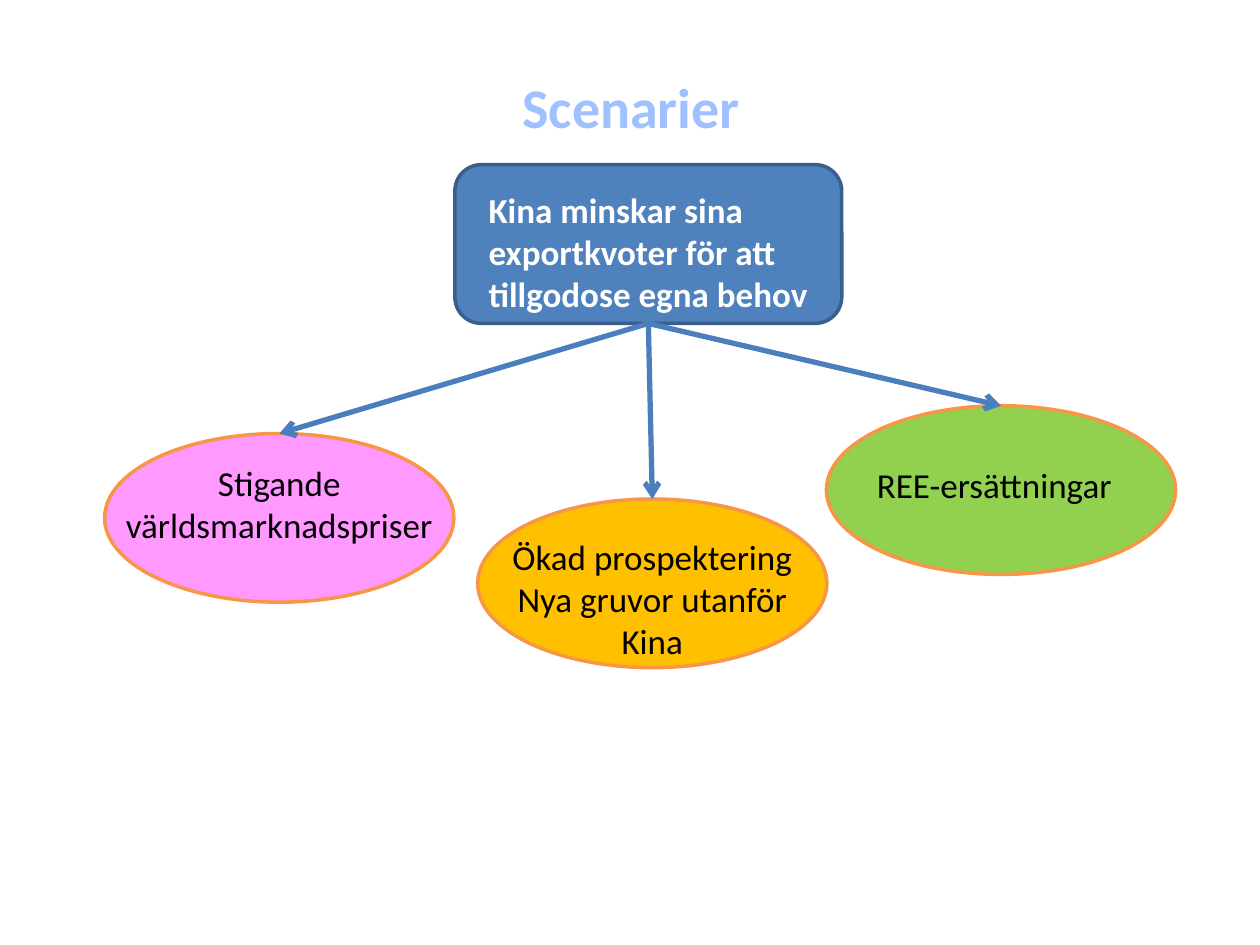
from pptx import Presentation
from pptx import util as u
from pptx.dml.color import RGBColor
from pptx.enum import shapes, text
from pptx.oxml.ns import qn
from lxml import etree

FONT = "Calibri"
TITLE_BLUE = RGBColor(0xA0, 0xC1, 0xFF)
BOX_BLUE = RGBColor(0x4F, 0x81, 0xBD)
BOX_EDGE = RGBColor(0x3A, 0x5F, 0x8C)
ARROW_BLUE = RGBColor(0x4B, 0x7E, 0xBC)
ORANGE = RGBColor(0xF7, 0x96, 0x46)
PINK = RGBColor(0xFF, 0x99, 0xFF)
AMBER = RGBColor(0xFF, 0xC0, 0x00)
GREEN = RGBColor(0x92, 0xD0, 0x50)
WHITE = RGBColor(0xFF, 0xFF, 0xFF)
BLACK = RGBColor(0, 0, 0)

TITLE = "Scenarier"
TITLE_AREA = (5.03, 1.32, 15.39, 1.63)
CAUSE = "Kina minskar sina exportkvoter för att tillgodose egna behov"
CAUSE_AREA = (9.17, 3.32, 7.8, 3.2)
CAUSE_TEXT_AREA = (9.6, 3.68, 7.77, 2.82)
ELLIPSE_SIZE = (7.04, 3.4)
OUTCOMES = [
    {"text": "Stigande världsmarknadspriser", "fill": PINK,
     "corner": (2.11, 8.74), "text_area": (2.11, 9.17, 7.04, 1.96)},
    {"text": "Ökad prospektering\nNya gruvor utanför Kina", "fill": AMBER,
     "corner": (9.63, 10.06), "text_area": (9.63, 10.67, 7.04, 2.82)},
    {"text": "REE-ersättningar", "fill": GREEN,
     "corner": (16.66, 8.18), "text_area": (16.68, 9.22, 6.73, 1.12)},
]


def cm(values):
    return [u.Cm(value) for value in values]


def write(shape, content, size, color, alignment, bold=False):
    frame = shape.text_frame
    frame.word_wrap = True
    frame.text = content
    for paragraph in frame.paragraphs:
        paragraph.alignment = alignment
        for run in paragraph.runs:
            run.font.name = FONT
            run.font.size = u.Pt(size)
            run.font.bold = bold
            run.font.color.rgb = color


def add_outline_shape(slide, kind, area, fill, edge):
    shape = slide.shapes.add_shape(kind, *cm(area))
    shape.shadow.inherit = False
    shape.fill.solid()
    shape.fill.fore_color.rgb = fill
    shape.line.color.rgb = edge
    shape.line.width = u.Pt(2)
    return shape


def add_label(slide, area, *formatting):
    write(slide.shapes.add_textbox(*cm(area)), *formatting)


def add_arrow(slide, start, end):
    arrow = slide.shapes.add_connector(shapes.MSO_CONNECTOR.STRAIGHT, 0, 0, 0, 0)
    arrow.begin_connect(start, 2)
    arrow.end_connect(end, 0)
    arrow.line.color.rgb = ARROW_BLUE
    arrow.line.width = u.Pt(3)
    etree.SubElement(arrow.line._get_or_add_ln(), qn("a:tailEnd"), type="arrow")
    etree.SubElement(arrow._element.spPr, qn("a:effectLst"))


def main():
    presentation = Presentation()
    presentation.slide_width, presentation.slide_height = cm((25.4, 19.05))
    slide = presentation.slides.add_slide(presentation.slide_layouts[5])
    center = text.PP_ALIGN.CENTER

    title = slide.shapes.title
    title.left, title.top, title.width, title.height = cm(TITLE_AREA)
    write(title, TITLE, 32, TITLE_BLUE, center, True)

    cause = add_outline_shape(slide, shapes.MSO_SHAPE.ROUNDED_RECTANGLE,
                              CAUSE_AREA, BOX_BLUE, BOX_EDGE)
    add_label(slide, CAUSE_TEXT_AREA, CAUSE, 20, WHITE, text.PP_ALIGN.LEFT, True)

    ellipses = [add_outline_shape(slide, shapes.MSO_SHAPE.OVAL,
                                  outcome["corner"] + ELLIPSE_SIZE,
                                  outcome["fill"], ORANGE)
                for outcome in OUTCOMES]
    for outcome in OUTCOMES:
        add_label(slide, outcome["text_area"], outcome["text"], 20, BLACK, center)
    for ellipse in ellipses:
        add_arrow(slide, cause, ellipse)

    presentation.save("out.pptx")


if __name__ == "__main__":
    main()
